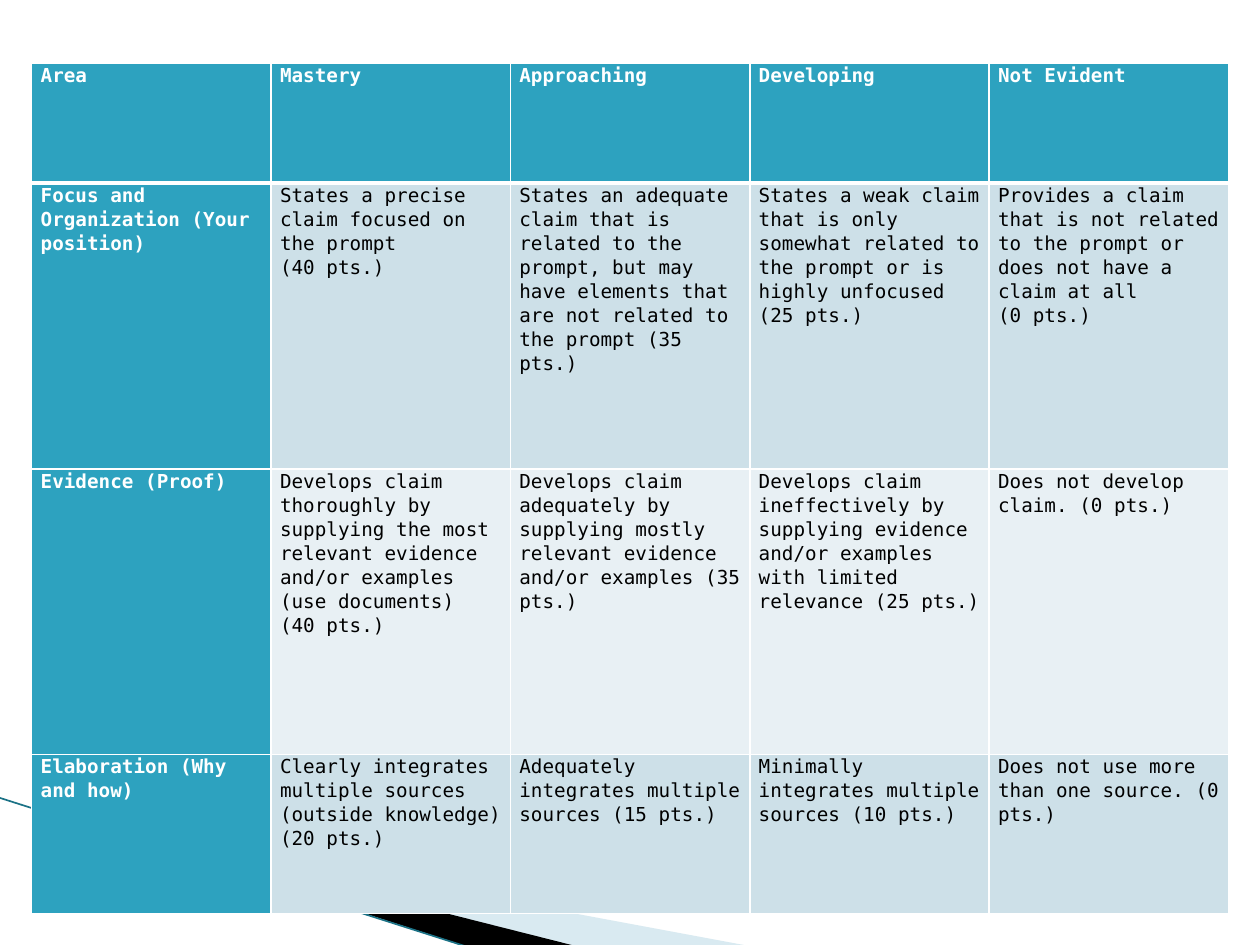
from lxml.etree import SubElement
from pptx import Presentation
from pptx.dml.color import RGBColor
from pptx.enum.shapes import MSO_CONNECTOR
from pptx.oxml.ns import qn
from pptx.util import Cm, Pt

WHITE = RGBColor(0xFF, 0xFF, 0xFF)
BLACK = RGBColor(0, 0, 0)
TEAL = RGBColor(0x2D, 0xA2, 0xBF)
DARK_TEAL = RGBColor(0x1B, 0x72, 0x86)
SKY = RGBColor(0xA0, 0xCB, 0xDC)
BAND_DARK = RGBColor(0xCD, 0xE0, 0xE8)
BAND_LIGHT = RGBColor(0xE8, 0xF0, 0xF4)

FONT = {"name": "DejaVu Sans Mono", "size": Pt(11)}
HEADING = {**FONT, "bold": True}
BODY = {**FONT, "bold": False}
CELL_MARGINS = {
    "margin_left": Cm(0.18), "margin_right": Cm(0.18),
    "margin_top": 0, "margin_bottom": 0,
}

TABLE_WIDTH = 24.13
ROW_HEIGHTS = [2.42, 5.76, 5.76, 3.2]
RUBRIC = [
    ["Area", "Mastery", "Approaching", "Developing", "Not Evident"],
    ["Focus and Organization (Your position)",
     "States a precise claim focused on the prompt\n(40 pts.)",
     "States an adequate claim that is related to the prompt, but may have "
     "elements that are not related to the prompt (35 pts.)",
     "States a weak claim that is only somewhat related to the prompt or is "
     "highly unfocused\n(25 pts.)",
     "Provides a claim that is not related to the prompt or does not have a "
     "claim at all\n(0 pts.)"],
    ["Evidence (Proof)",
     "Develops claim thoroughly by supplying the most relevant evidence "
     "and/or examples (use documents)\n(40 pts.)",
     "Develops claim adequately by supplying mostly relevant evidence and/or "
     "examples (35 pts.)",
     "Develops claim ineffectively by supplying evidence and/or examples with "
     "limited relevance (25 pts.)",
     "Does not develop claim. (0 pts.)"],
    ["Elaboration (Why and how)",
     "Clearly integrates multiple sources (outside knowledge) (20 pts.)",
     "Adequately integrates multiple sources (15 pts.)",
     "Minimally integrates multiple sources (10 pts.)",
     "Does not use more than one source. (0 pts.)"],
]


def set_all(target, values):
    for attribute, value in values.items():
        setattr(target, attribute, value)


def add_wedge(slide, corners, color, opacity=100):
    """Draw a filled polygon; corners are in centimetres."""
    points = [(Cm(x), Cm(y)) for x, y in corners]
    builder = slide.shapes.build_freeform(*points[0])
    builder.add_line_segments(points[1:], close=True)
    wedge = builder.convert_to_shape()
    wedge.shadow.inherit = False
    wedge.line.fill.background()
    wedge.fill.solid()
    wedge.fill.fore_color.rgb = color
    if opacity < 100:
        color_node = wedge.fill._xPr.find(qn("a:solidFill"))[0]
        SubElement(color_node, qn("a:alpha"), val=str(opacity * 1000))


def add_edge_line(slide, start, end):
    ends = [Cm(value) for value in (*start, *end)]
    edge = slide.shapes.add_connector(MSO_CONNECTOR.STRAIGHT, *ends)
    edge.line.color.rgb = DARK_TEAL
    edge.line.width = Pt(0.95)
    SubElement(edge._element.spPr, qn("a:effectLst"))


def set_borders(cell, widths):
    """Give a cell white borders; widths maps L, R, T, B to points."""
    properties = cell._tc.get_or_add_tcPr()
    for side, width in widths.items():
        border = SubElement(properties, qn(f"a:ln{side}"), w=str(Pt(width)))
        fill = SubElement(border, qn("a:solidFill"))
        SubElement(fill, qn("a:srgbClr"), val=str(WHITE))


def fill_cell(cell, text, row, column):
    is_heading = row == 0 or column == 0
    set_borders(cell, {"L": 1, "R": 1,
                       "T": 3 if row == 1 else 1,
                       "B": 3 if row == 0 else 1})
    cell.fill.solid()
    band = BAND_DARK if row % 2 else BAND_LIGHT
    cell.fill.fore_color.rgb = TEAL if is_heading else band
    set_all(cell, CELL_MARGINS)
    cell.text_frame.text = text
    for paragraph in cell.text_frame.paragraphs:
        paragraph.line_spacing = 1.07
        for run in paragraph.runs:
            set_all(run.font, HEADING if is_heading else BODY)
            run.font.color.rgb = WHITE if is_heading else BLACK


def add_rubric(slide):
    column_count = len(RUBRIC[0])
    table = slide.shapes.add_table(
        len(RUBRIC), column_count, Cm(0.64), Cm(1.27),
        Cm(TABLE_WIDTH), Cm(sum(ROW_HEIGHTS))).table
    for column in table.columns:
        column.width = Cm(TABLE_WIDTH / column_count)
    for row, (height, texts) in enumerate(zip(ROW_HEIGHTS, RUBRIC)):
        table.rows[row].height = Cm(height)
        for column, text in enumerate(texts):
            fill_cell(table.cell(row, column), text, row, column)


def main():
    presentation = Presentation()
    presentation.slide_width = Cm(25.4)
    presentation.slide_height = Cm(19.05)
    slide = presentation.slides.add_slide(presentation.slide_layouts[6])
    add_wedge(slide, [(1.4, 16.52), (15.1, 19.07), (11.58, 19.07)], SKY, 40)
    add_wedge(slide, [(1.35, 16.48), (11.6, 19.07), (9.45, 19.09)], BLACK)
    add_edge_line(slide, (-0.02, 16.08), (9.43, 19.09))
    add_rubric(slide)
    presentation.save("out.pptx")


if __name__ == "__main__":
    main()
